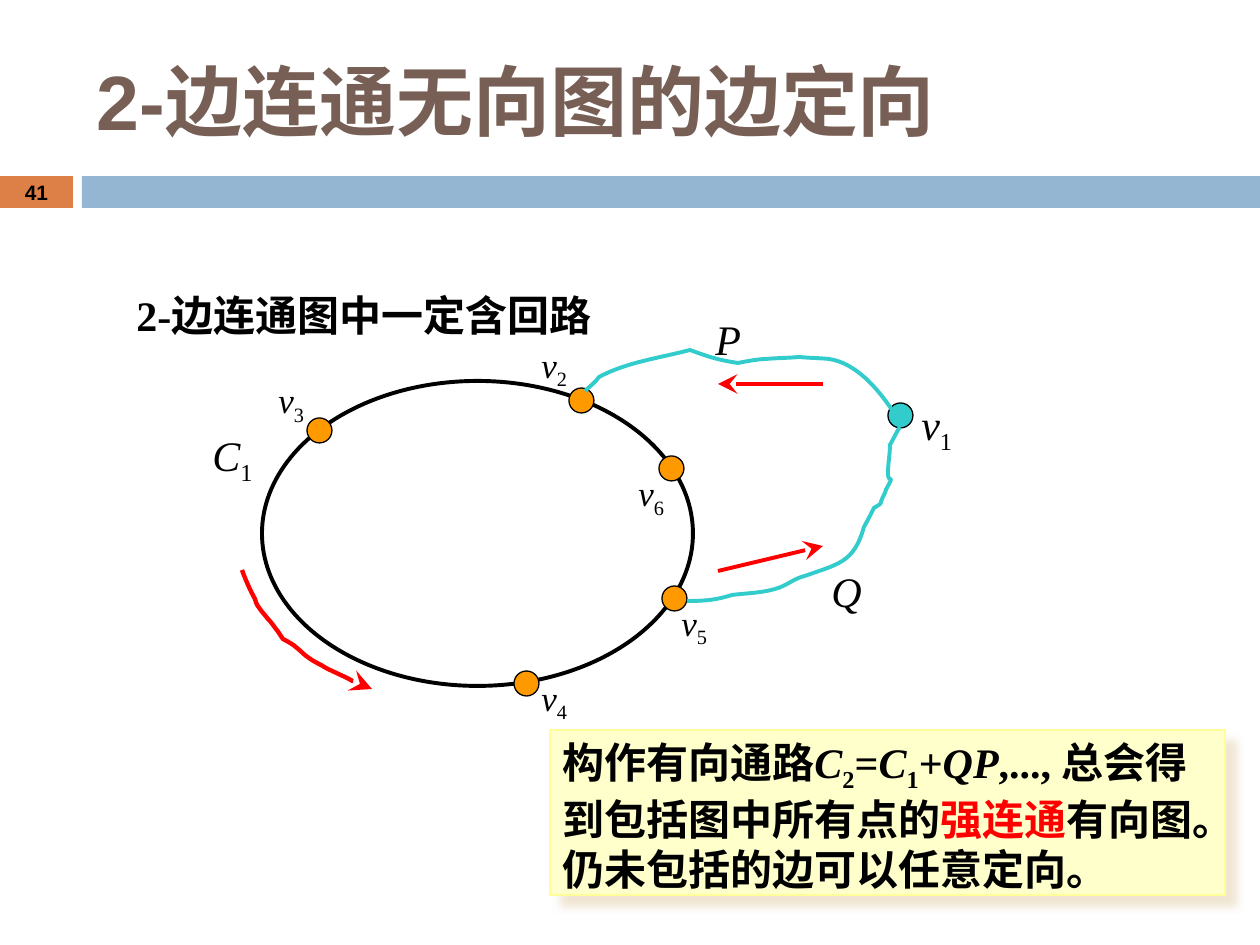
"""Build the slide on directing the edges of a 2-edge-connected graph."""
from lxml.etree import SubElement as Sub
from pptx import Presentation
from pptx.dml.color import RGBColor as Rgb
from pptx.enum.shapes import MSO_CONNECTOR as Link, MSO_SHAPE as Kind
from pptx.enum.text import MSO_ANCHOR as Anchor, PP_ALIGN as Align
from pptx.oxml.ns import qn
from pptx.util import Pt

PX = 914400 / 126
HUE = {
    "black": "000000", "red": "FF0000", "teal": "33CCCC", "amber": "FF9900",
    "brown": "775F55", "rust": "DD8047", "blue": "94B6D2",
    "cream": "FFFFCC", "lemon": "FFFF99", "sand": "EBDDC3",
}
TINT = {name: Rgb.from_string(code) for name, code in HUE.items()}
SERIF = "Times New Roman"


def write(shape, runs, size, font=SERIF, bold=False, color="black"):
    """Fill a shape with runs given as (text, style): i italic, s subscript, r red."""
    frame = shape.text_frame
    frame.word_wrap = True
    para = frame.paragraphs[0]
    para.alignment = Align.LEFT
    if font == SERIF:
        para.space_before = Pt(3)
    for text, style in runs:
        run = para.add_run()
        run.text = text
        run.font.name, run.font.size = font, Pt(size)
        run.font.bold, run.font.italic = bold, "i" in style
        run.font.color.rgb = TINT["red" if "r" in style else color]
        if "s" in style:
            run._r.get_or_add_rPr().set("baseline", "-25000")
    return para


def curve(points, color, width):
    """Draw a chain of cubic Bezier pieces as one open outline."""
    pen = shapes.build_freeform(*points[0], scale=PX)
    pen.add_line_segments(points[1:], close=False)
    shape = pen.convert_to_shape()
    outline = next(shape._element.iter(qn("a:path")))
    lines = outline.findall(qn("a:lnTo"))
    for k in range(0, len(lines), 3):
        bend = Sub(outline, qn("a:cubicBezTo"))
        for line in lines[k:k + 3]:
            bend.append(line[0])
            outline.remove(line)
    shape.shadow.inherit = False
    shape.fill.background()
    shape.line.color.rgb, shape.line.width = TINT[color], Pt(width)
    return shape


deck = Presentation()
deck.slide_width, deck.slide_height = round(1260 * PX), round(945 * PX)
slide = deck.slides.add_slide(deck.slide_layouts[5])
shapes = slide.shapes

title = shapes.title
title.left, title.top, title.width, title.height = [round(v * PX) for v in (84, 32, 1124, 136)]
title.text_frame.vertical_anchor = Anchor.MIDDLE
write(title, [("2-边连通无向图的边定向", "")], 44, "Arial", True, "brown")

solids = [
    (Kind.RECTANGLE, (0, 176, 73, 32), "rust", None, 0),
    (Kind.RECTANGLE, (82, 176, 1178, 32), "blue", None, 0),
    (Kind.OVAL, (262, 381, 431, 305), None, "black", 2.25),
]
dots = [(307, 418), (514, 671), (569, 388), (662, 586), (659, 456)]
solids += [(Kind.OVAL, (x, y, 25, 25), "amber", "black", 0.75) for x, y in dots]
solids += [
    (Kind.OVAL, (888, 403, 25, 25), "teal", "black", 0.75),
    (Kind.RECTANGLE, (550, 730, 675, 165), "cream", "lemon", 0.75),
]
for kind, box, fill, edge, width in solids:
    shape = shapes.add_shape(kind, *[round(v * PX) for v in box])
    shape.shadow.inherit = False
    if fill:
        shape.fill.solid()
        shape.fill.fore_color.rgb = TINT[fill]
    else:
        shape.fill.background()
    if edge:
        shape.line.color.rgb, shape.line.width = TINT[edge], Pt(width)
    else:
        shape.line.fill.background()

note = shape
note.text_frame.vertical_anchor = Anchor.TOP
write(note, [
    ("构作有向通路", ""), ("C", "i"), ("2", "s"), ("=", ""), ("C", "i"), ("1", "s"),
    ("+", ""), ("QP", "i"), (",..., 总会得到包括图中所有点的", ""), ("强连通", "r"),
    ("有向图。仍未包括的边可以任意定向。", ""),
], 24, bold=True)
glow = Sub(note._element.spPr.find(qn("a:effectLst")), qn("a:outerShdw"),
           blurRad=str(Pt(5)), dist=str(Pt(8.5)), dir="2700000", algn="tl", rotWithShape="0")
shade = Sub(glow, qn("a:srgbClr"), val=HUE["sand"])
Sub(shade, qn("a:alpha"), val="75000")

page = shapes.add_textbox(*[round(v * PX) for v in (0, 175, 73, 34)])
page.text_frame.vertical_anchor = Anchor.MIDDLE
write(page, [("41", "")], 11.9, "Arial", True).alignment = Align.CENTER

lead = shapes.add_textbox(*[round(v * PX) for v in (124, 283, 546, 64)])
write(lead, [("2-边连通图中一定含回路", "")], 24, bold=True)

labels = [
    ("C", "1", (200, 423, 73, 63), 24), ("v", "3", (266, 372, 94, 54), 20),
    ("v", "4", (529, 670, 94, 54), 20), ("v", "2", (529, 337, 94, 54), 20),
    ("v", "5", (669, 595, 94, 54), 20), ("v", "6", (626, 465, 94, 54), 20),
    ("v", "1", (909, 392, 63, 63), 24), ("P", "", (703, 307, 158, 63), 24),
    ("Q", "", (819, 559, 63, 63), 24),
]
for name, index, box, size in labels:
    label = shapes.add_textbox(*[round(v * PX) for v in box])
    write(label, [(name, "i")] + ([(index, "s")] if index else []), size)

curve([
    (892, 410), (878, 389), (856, 363), (829, 359), (819, 358), (809, 358), (799, 357),
    (789, 358), (777, 358), (766, 359), (757, 359), (738, 363), (738, 363),
    (718, 360), (709, 357), (690, 350), (660, 358), (627, 362), (599, 377),
    (595, 383), (590, 386), (585, 391),
], "teal", 2.25)
curve([
    (900, 427), (896, 433), (893, 440), (890, 445), (890, 455), (888, 464), (888, 473),
    (888, 485), (895, 473), (888, 486), (887, 489), (885, 490), (885, 493),
    (877, 508), (885, 501), (874, 508), (871, 514), (868, 520), (864, 527),
    (854, 563), (838, 564), (805, 576), (796, 578), (790, 583), (781, 587),
    (766, 593), (748, 593), (732, 595), (716, 600), (706, 601), (687, 601),
], "teal", 2.25)
arrows = [curve([
    (242, 570), (246, 581), (251, 592), (255, 599), (257, 606), (258, 606), (260, 609),
    (262, 612), (265, 615), (268, 619), (271, 622), (273, 625), (276, 629),
    (278, 631), (280, 635), (283, 639), (287, 641), (294, 645), (297, 648),
    (301, 651), (304, 655), (309, 658), (314, 662), (320, 664), (326, 668),
    (334, 672), (343, 676), (349, 679), (354, 682), (357, 682), (360, 684),
    (364, 685), (370, 689), (372, 689),
], "red", 2.5)]
for ends in [(823, 384, 718, 384), (718, 571, 823, 546)]:
    arrow = shapes.add_connector(Link.STRAIGHT, *[round(v * PX) for v in ends])
    arrow.line.color.rgb, arrow.line.width = TINT["red"], Pt(2.25)
    Sub(arrow._element.spPr, qn("a:effectLst"))
    arrows.append(arrow)
for arrow in arrows:
    Sub(arrow.line._get_or_add_ln(), qn("a:tailEnd"), type="stealth", w="lg", len="lg")

deck.save("out.pptx")
